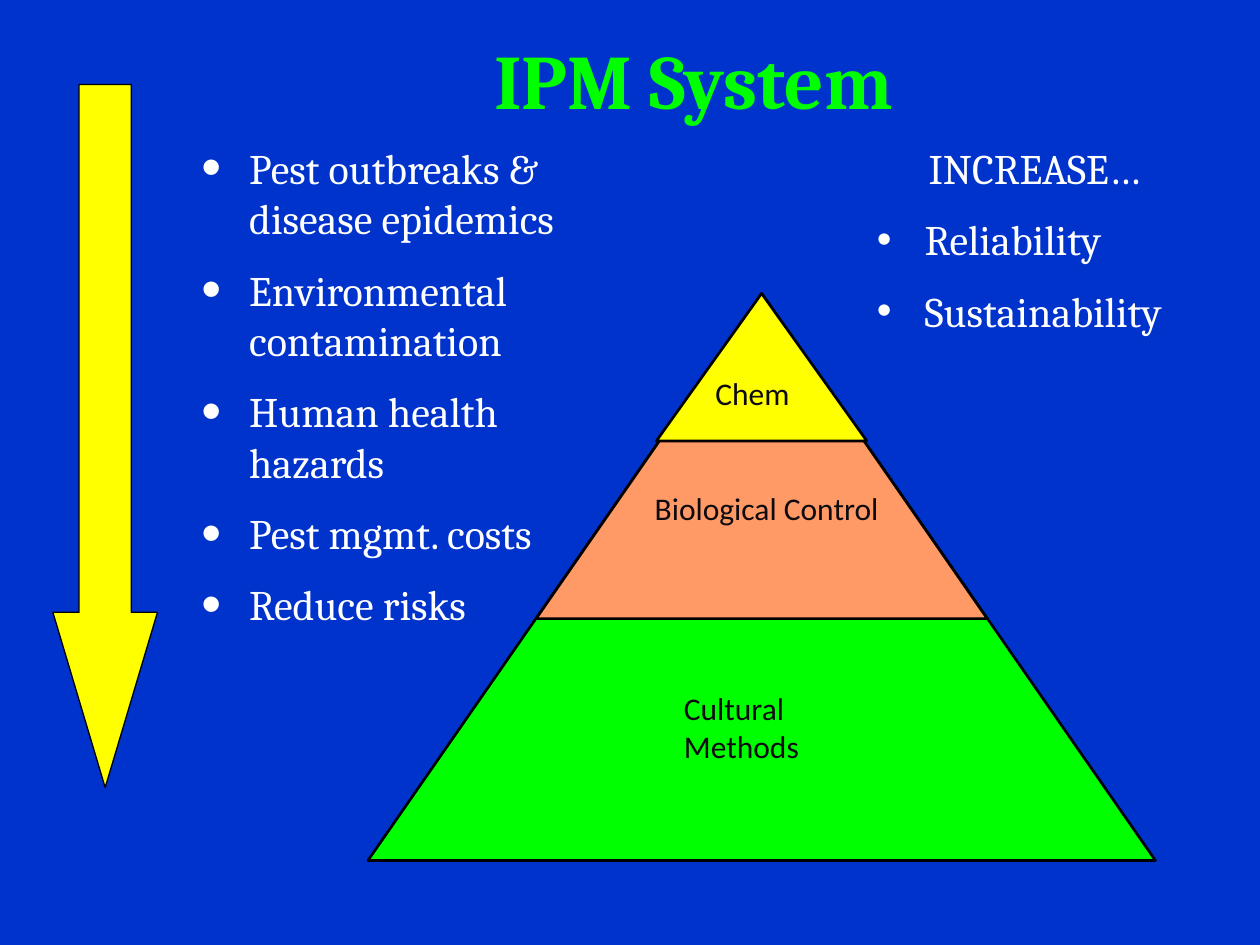
from lxml import etree
from pptx import Presentation
from pptx.dml.color import RGBColor
from pptx.enum.shapes import MSO_SHAPE
from pptx.enum.text import MSO_ANCHOR, PP_ALIGN
from pptx.oxml.ns import qn
from pptx.util import Inches, Pt

BLUE, YELLOW, GREEN, ORANGE = "0033CC", "FFFF00", "00FF00", "FF9966"
WHITE, BLACK, INK = "FFFFFF", "000000", "0D0A10"


def rgb(value):
    return RGBColor.from_string(value)


def add_solid(slide, kind, box, fill, line_width):
    solid = slide.shapes.add_shape(kind, *map(Inches, box))
    solid.shadow.inherit = False
    solid.fill.solid()
    solid.fill.fore_color.rgb = rgb(fill)
    solid.line.color.rgb = rgb(BLACK)
    solid.line.width = Pt(line_width)
    return solid


def add_text(slide, box, lines, size, color, font="Cambria", bold=False,
             align=PP_ALIGN.LEFT, anchor=MSO_ANCHOR.TOP):
    """Add one paragraph per line, half a line apart, and return the paragraphs."""
    frame = slide.shapes.add_textbox(*map(Inches, box)).text_frame
    frame.word_wrap = True
    frame.vertical_anchor = anchor
    for index, line in enumerate(lines):
        paragraph = frame.add_paragraph() if index else frame.paragraphs[0]
        paragraph.alignment = align
        if index:
            paragraph.space_before = Pt(size / 2)
        run = paragraph.add_run()
        run.text = line
        run.font.name = font
        run.font.size = Pt(size)
        run.font.bold = bold
        run.font.color.rgb = rgb(color)
    return frame.paragraphs


def add_bullet(paragraph, margin, hanging, percent=100):
    properties = paragraph._p.get_or_add_pPr()
    properties.set("marL", str(Inches(margin)))
    properties.set("indent", str(-Inches(hanging)))
    for tag, name, value in (("a:buSzPct", "val", str(percent * 1000)),
                             ("a:buFont", "typeface", "Arial"),
                             ("a:buChar", "char", "•")):
        etree.SubElement(properties, qn(tag)).set(name, value)


def add_decrease_arrow(slide, box):
    arrow = add_solid(slide, MSO_SHAPE.DOWN_ARROW, box, YELLOW, 0.75)
    arrow.adjustments[0] = 0.5
    arrow.adjustments[1] = 1.675


def add_decrease_list(slide, box):
    for paragraph in add_text(slide, box, [
            "Pest outbreaks & disease epidemics", "Environmental contamination",
            "Human health hazards", "Pest mgmt. costs", "Reduce risks"], 24, WHITE):
        add_bullet(paragraph, 0.38, 0.38, 135)


def add_increase_list(slide, box):
    heading, *benefits = add_text(
        slide, box, ["INCREASE…", "Reliability", "Sustainability"], 24, WHITE)
    heading.alignment = PP_ALIGN.CENTER
    for benefit in benefits:
        add_bullet(benefit, 0.57, 0.38)


def add_pyramid(slide, box):
    """Stack triangles that share an apex, the widest at the back, then label them."""
    left, top, width, height = box
    apex = left + width / 2
    for tier_width, tier_height, fill in ((width, height, GREEN),
                                          (3.58, 2.58, ORANGE),
                                          (1.67, 1.17, YELLOW)):
        add_solid(slide, MSO_SHAPE.ISOSCELES_TRIANGLE,
                  (apex - tier_width / 2, top, tier_width, tier_height), fill, 1.5)
    for label, dx, dy, label_width, label_height, align in (
            ("Cultural Methods", 2.41, 3.09, 1.5, 0.71, PP_ALIGN.LEFT),
            ("Biological Control", 2.08, 1.5, 2.17, 0.4, PP_ALIGN.CENTER),
            ("Chem", 2.66, 0.59, 1.17, 0.4, PP_ALIGN.LEFT)):
        add_text(slide, (left + dx, top + dy, label_width, label_height),
                 [label], 18, INK, "Calibri", align=align)


def main():
    deck = Presentation()
    deck.slide_width, deck.slide_height = Inches(10), Inches(7.5)
    slide = deck.slides.add_slide(deck.slide_layouts[6])
    slide.background.fill.solid()
    slide.background.fill.fore_color.rgb = rgb(BLUE)

    add_decrease_arrow(slide, (0.42, 0.67, 0.83, 5.58))
    add_decrease_list(slide, (1.5, 1.08, 3.67, 4.14))
    add_text(slide, (2.92, 0, 5.17, 1.25), ["IPM System"], 44, GREEN, bold=True,
             align=PP_ALIGN.CENTER, anchor=MSO_ANCHOR.MIDDLE)
    add_increase_list(slide, (6.67, 1.08, 3.08, 1.72))
    add_pyramid(slide, (2.92, 2.33, 6.25, 4.5))
    deck.save("out.pptx")


if __name__ == "__main__":
    main()
